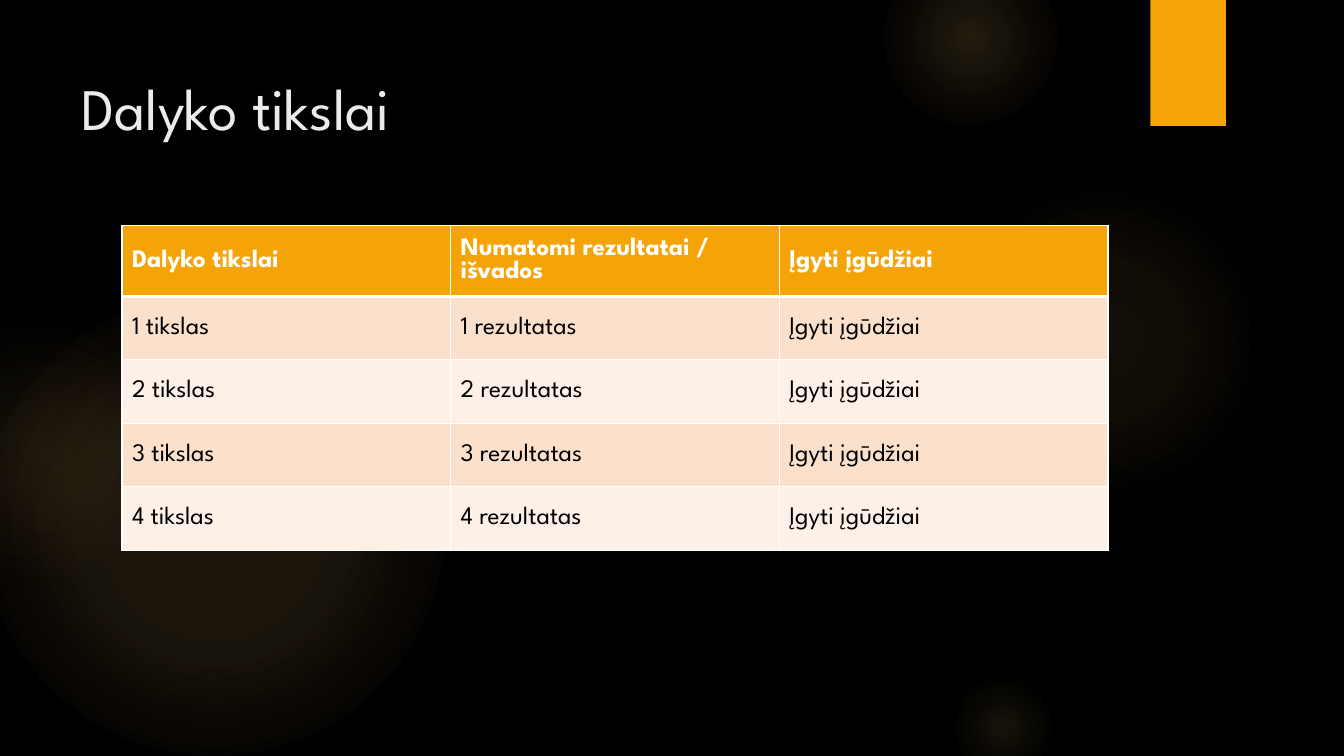
import pptx
import pptx.dml.color
import pptx.enum.shapes
import pptx.enum.text
import pptx.oxml
import pptx.oxml.ns
import pptx.util

Inches = pptx.util.Inches
Pt = pptx.util.Pt
FONT = "League Spartan"
COLORS = {
    "background": "000000", "accent": "F5A408", "title": "EBEBEB",
    "white": "FFFFFF", "body": "000000", "band_dark": "FBE0CC",
    "band_light": "FDF0E7", "glow": "FAC96A", "glow_warm": "F59B74",
}
# Left, top, diameter, then gradient stops as (position %, colour, opacity %)
GLOWS = [
    (-0.17, 2.92, 4.58, [(0, "glow", 11), (36, "glow", 10), (75, "glow", 0)]),
    (-0.92, 3.17, 2.58, [(0, "glow", 8), (36, "glow", 5), (71, "glow_warm", 0)]),
    (9.41, 1.83, 3.08, [(0, "glow", 7), (36, "glow", 6), (69, "glow", 0)]),
    (8.75, -0.5, 1.75, [(0, "glow", 14), (36, "glow", 7), (73, "glow", 0)]),
    (9.41, 6.67, 1.08, [(0, "glow", 10), (31, "glow", 5), (66, "glow", 0)]),
]
HEADERS = ["Dalyko tikslai", "Numatomi rezultatai / išvados", "Įgyti įgūdžiai"]
GOALS = [[f"{number} tikslas", f"{number} rezultatas", "Įgyti įgūdžiai"]
         for number in range(1, 5)]


def rgb(name):
    return pptx.dml.color.RGBColor.from_string(COLORS[name])


def set_attributes(target, values):
    for name, value in values.items():
        setattr(target, name, value)


def write_text(text_frame, text, size, color, bold=False):
    paragraph = text_frame.paragraphs[0]
    run = paragraph.add_run()
    run.text = text
    set_attributes(run.font, {"name": FONT, "size": Pt(size), "bold": bold})
    run.font.color.rgb = rgb(color)


def add_plain_shape(slide, kind, left, top, width, height):
    shape = slide.shapes.add_shape(
        kind, Inches(left), Inches(top), Inches(width), Inches(height))
    shape.shadow.inherit = False
    shape.line.fill.background()
    return shape


def add_glow(slide, left, top, diameter, stops):
    shape = add_plain_shape(slide, pptx.enum.shapes.MSO_SHAPE.OVAL,
                            left, top, diameter, diameter)
    stop_xml = "".join(
        f'<a:gs pos="{position * 1000}"><a:srgbClr val="{COLORS[color]}">'
        f'<a:alpha val="{opacity * 1000}"/></a:srgbClr></a:gs>'
        for position, color, opacity in stops)
    gradient = pptx.oxml.parse_xml(
        f'<a:gradFill {pptx.oxml.ns.nsdecls("a")} rotWithShape="1">'
        f'<a:gsLst>{stop_xml}</a:gsLst><a:path path="circle">'
        '<a:fillToRect l="50000" t="50000" r="50000" b="50000"/>'
        '</a:path></a:gradFill>')
    geometry = shape._element.spPr.find(pptx.oxml.ns.qn("a:prstGeom"))
    geometry.addnext(gradient)


def add_title(slide, text):
    box = slide.shapes.add_textbox(
        Inches(0.71), Inches(0.5), Inches(10.29), Inches(1.53))
    set_attributes(box.text_frame, {
        "word_wrap": True, "margin_top": Inches(0.21),
        "vertical_anchor": pptx.enum.text.MSO_ANCHOR.TOP})
    write_text(box.text_frame, text, 42, "title")


def set_borders(cell, widths):
    properties = cell._tc.get_or_add_tcPr()
    for index, (side, width) in enumerate(widths.items()):
        border = pptx.oxml.parse_xml(
            f'<a:{side} {pptx.oxml.ns.nsdecls("a")} w="{Pt(width)}">'
            f'<a:solidFill><a:srgbClr val="{COLORS["white"]}"/></a:solidFill>'
            f'</a:{side}>')
        properties.insert(index, border)


def add_goal_table(slide, rows):
    column_width, row_height = 3.26, 0.63
    table = slide.shapes.add_table(
        len(rows), len(rows[0]), Inches(1.21), Inches(2.24),
        Inches(column_width * len(rows[0])),
        Inches(row_height * len(rows))).table
    for row_index, row in enumerate(rows):
        header = row_index == 0
        band = "band_dark" if row_index % 2 else "band_light"
        for column_index, text in enumerate(row):
            cell = table.cell(row_index, column_index)
            cell.vertical_anchor = pptx.enum.text.MSO_ANCHOR.MIDDLE
            cell.fill.solid()
            cell.fill.fore_color.rgb = rgb("accent" if header else band)
            write_text(cell.text_frame, text, 18,
                       "white" if header else "body", header)
            # The rule under the header is thicker
            set_borders(cell, {"lnL": 1, "lnR": 1,
                               "lnT": 3 if row_index == 1 else 1,
                               "lnB": 3 if header else 1})


def main():
    presentation = pptx.Presentation()
    set_attributes(presentation, {"slide_width": Inches(13.33),
                                  "slide_height": Inches(7.5)})
    slide = presentation.slides.add_slide(presentation.slide_layouts[6])

    # Background with soft glows
    slide.background.fill.solid()
    slide.background.fill.fore_color.rgb = rgb("background")
    for glow in GLOWS:
        add_glow(slide, *glow)

    # Accent tab
    tab = add_plain_shape(slide, pptx.enum.shapes.MSO_SHAPE.RECTANGLE,
                          11.41, 0, 0.75, 1.25)
    tab.fill.solid()
    tab.fill.fore_color.rgb = rgb("accent")

    # Title and table
    add_title(slide, "Dalyko tikslai")
    add_goal_table(slide, [HEADERS] + GOALS)

    presentation.save("out.pptx")


if __name__ == "__main__":
    main()
